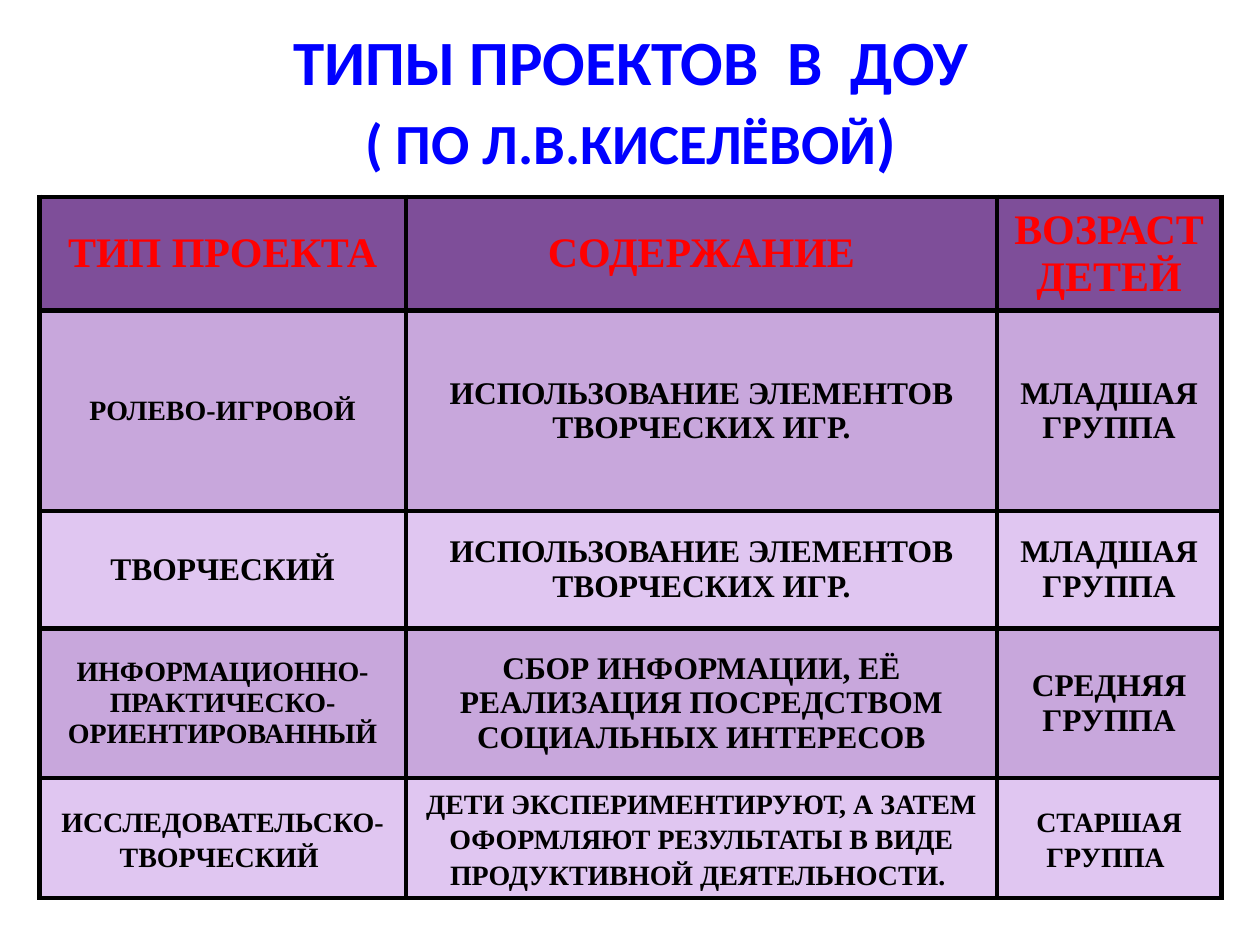
from lxml import etree
from pptx import Presentation
from pptx.dml.color import RGBColor
from pptx.enum.text import MSO_ANCHOR, MSO_AUTO_SIZE, PP_ALIGN
from pptx.oxml import parse_xml
from pptx.oxml.ns import nsdecls, qn
from pptx.util import Pt

CENTER = PP_ALIGN.CENTER
MIDDLE = MSO_ANCHOR.MIDDLE
NO_FIT = MSO_AUTO_SIZE.NONE

BLUE = RGBColor(0x00, 0x00, 0xFF)
RED = RGBColor(0xFF, 0x00, 0x00)
BLACK = RGBColor(0x00, 0x00, 0x00)
LILAC = RGBColor(0xA3, 0x79, 0xBB)
PURPLE = RGBColor(0x7E, 0x4E, 0x99)
BANDS = (RGBColor(0xC8, 0xA7, 0xDC), RGBColor(0xE0, 0xC6, 0xF1))

COLS = (209.5, 337.7, 128.2)
ROWS = (65, 114.5, 67, 85.7, 67)
HEAD = ("ТИП ПРОЕКТА", "СОДЕРЖАНИЕ", "ВОЗРАСТ ДЕТЕЙ")
GAMES = "ИСПОЛЬЗОВАНИЕ ЭЛЕМЕНТОВ ТВОРЧЕСКИХ ИГР."
YOUNG = "МЛАДШАЯ ГРУППА"
# Each row: texts and their sizes
TYPES = (
    (("РОЛЕВО-ИГРОВОЙ", GAMES, YOUNG), (16, 18, 18)),
    (("ТВОРЧЕСКИЙ", GAMES, YOUNG), (18, 18, 18)),
    (("ИНФОРМАЦИОННО-ПРАКТИЧЕСКО-ОРИЕНТИРОВАННЫЙ",
      "СБОР ИНФОРМАЦИИ, ЕЁ РЕАЛИЗАЦИЯ ПОСРЕДСТВОМ СОЦИАЛЬНЫХ ИНТЕРЕСОВ",
      "СРЕДНЯЯ ГРУППА"), (16, 18, 18)),
    (("ИССЛЕДОВАТЕЛЬСКО-ТВОРЧЕСКИЙ ",
      "ДЕТИ ЭКСПЕРИМЕНТИРУЮТ, А ЗАТЕМ ОФОРМЛЯЮТ РЕЗУЛЬТАТЫ В ВИДЕ "
      "ПРОДУКТИВНОЙ ДЕЯТЕЛЬНОСТИ. ",
      "СТАРШАЯ ГРУППА "), (16, 16, 16)),
)


def add_run(para, text, size, face, color):
    run = para.add_run()
    run.text = text
    font = run.font
    font.name, font.size, font.bold = face, Pt(size), True
    font.color.rgb = color
    return run


def line_xml(tag, color, width):
    return parse_xml(
        f'<a:{tag} {nsdecls("a")} w="{Pt(width)}"><a:solidFill>'
        f'<a:srgbClr val="{color}"/></a:solidFill></a:{tag}>')


def add_title(slide, left, top, width, height):
    title = slide.shapes.title
    title.left, title.top = Pt(left), Pt(top)
    title.width, title.height = Pt(width), Pt(height)
    frame = title.text_frame
    frame.auto_size = NO_FIT
    frame.vertical_anchor = MIDDLE
    para = frame.paragraphs[0]
    para.alignment = CENTER
    para.line_spacing = Pt(45)

    def add_part(text, size):
        run = add_run(para, text, size, "Calibri", BLUE)
        # The outline must come first in the run properties
        run.font._element.insert(0, line_xml("ln", LILAC, 0.75))

    add_part("ТИПЫ ПРОЕКТОВ  В  ДОУ", 36)
    para.add_line_break()
    add_part("( ПО Л.В.КИСЕЛЁВОЙ", 32.4)
    add_part(")", 36)


def fill_cell(cell, text, size, color, back):
    cell.vertical_anchor = MIDDLE
    cell.fill.solid()
    cell.fill.fore_color.rgb = back
    para = cell.text_frame.paragraphs[0]
    para.alignment = CENTER
    add_run(para, text, size, "Times New Roman", color)
    # Borders go before the fill
    props = cell._tc.find(qn("a:tcPr"))
    for i, tag in enumerate(("lnL", "lnR", "lnT", "lnB")):
        props.insert(i, line_xml(tag, BLACK, 3))
    return para


def add_grid(slide, left, top, width, height):
    table = slide.shapes.add_table(
        len(ROWS), len(COLS), Pt(left), Pt(top), Pt(width), Pt(height)).table
    for col, size in zip(table.columns, COLS):
        col.width = Pt(size)
    for row, size in zip(table.rows, ROWS):
        row.height = Pt(size)

    # Header row
    for c, text in enumerate(HEAD):
        fill_cell(table.cell(0, c), text, 24, RED, PURPLE)

    # Project types in alternating bands
    for r, (texts, sizes) in enumerate(TYPES, 1):
        for c, (text, size) in enumerate(zip(texts, sizes)):
            back = BANDS[(r - 1) % 2]
            para = fill_cell(table.cell(r, c), text, size, BLACK, back)
            if r == len(TYPES):
                para.line_spacing = 1.15
                para.space_after = Pt(10)


def main():
    prs = Presentation()
    prs.slide_width, prs.slide_height = Pt(720), Pt(540)
    slide = prs.slides.add_slide(prs.slide_layouts[5])
    add_title(slide, 67.5, 11.25, 586, 90)
    add_grid(slide, 22.5, 112.5, sum(COLS), sum(ROWS))
    prs.save("out.pptx")


if __name__ == "__main__":
    main()
